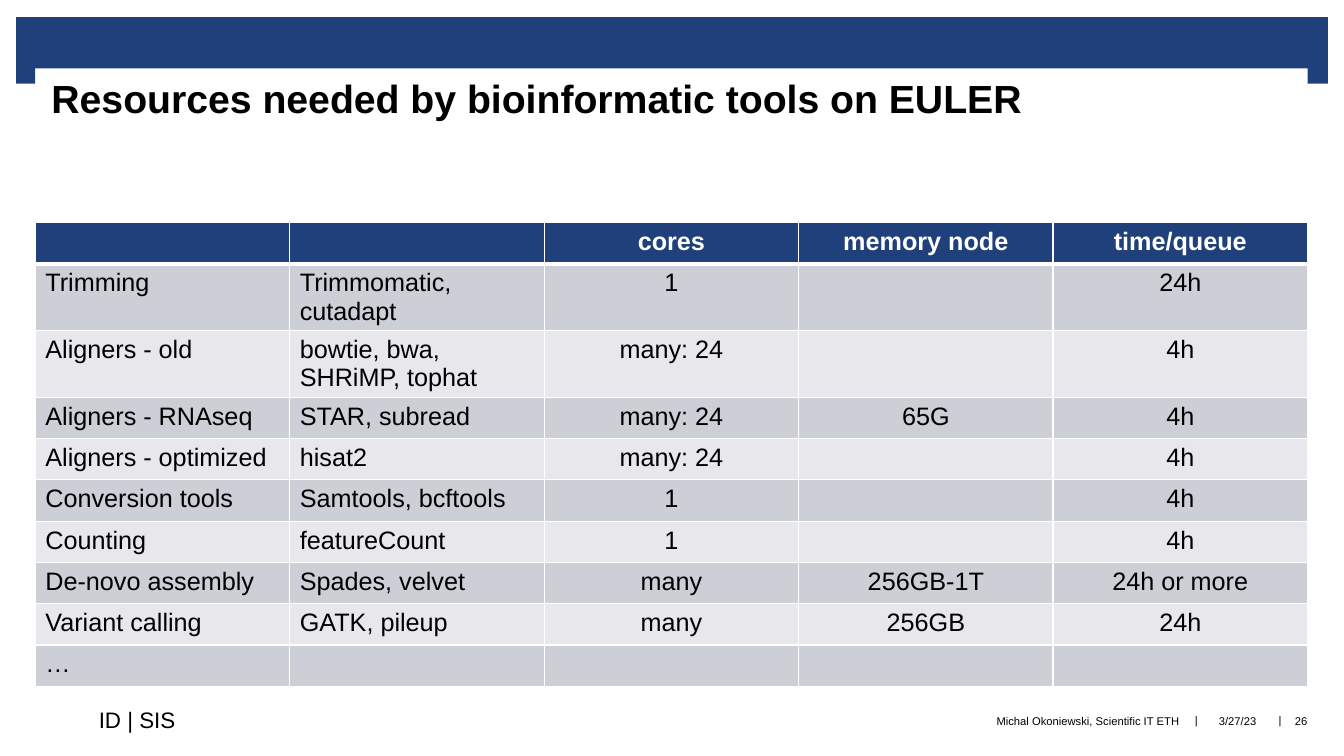
from typing import NamedTuple

from lxml import etree
from pptx import Presentation, util as u
from pptx.dml.color import RGBColor
from pptx.enum import shapes, text
from pptx.oxml.ns import qn

BLUE, WHITE, BLACK = "1F407A", "FFFFFF", "000000"
BANDS = ("CDCFD7", "E8E8EC")
LEFT, CENTER, RIGHT = text.PP_ALIGN.LEFT, text.PP_ALIGN.CENTER, text.PP_ALIGN.RIGHT
TOP, MIDDLE = text.MSO_ANCHOR.TOP, text.MSO_ANCHOR.MIDDLE


class Box(NamedTuple):
    left: float
    top: float
    width: float
    height: float


class Label(NamedTuple):
    words: str
    box: Box
    size: float = 8
    align: text.PP_ALIGN = CENTER


BARS = (
    Box(0.16, 0.17, 13.01, 0.51),
    Box(0.16, 0.65, 0.19, 0.18),
    Box(12.97, 0.65, 0.2, 0.18),
)
LABELS = (
    Label("|", Box(12.62, 6.89, 0.15, 0.51)),
    Label("|", Box(11.79, 6.89, 0.15, 0.51)),
    Label("ID | SIS", Box(0.98, 6.82, 1.2, 0.64), 16, LEFT),
    Label("3/27/23", Box(11.94, 6.9, 0.67, 0.51)),
    Label("Michal Okoniewski, Scientific IT ETH", Box(6.66, 6.9, 5.04, 0.5), 8, RIGHT),
    Label("26", Box(12.71, 6.9, 0.39, 0.51)),
)
TITLE_BOX = Box(0.35, 0.68, 12.62, 1.06)
TABLE_BOX = Box(0.35, 2.21, 12.62, 4.1)
RESOURCES = (
    ("", "", "cores", "memory node", "time/queue"),
    ("Trimming", "Trimmomatic, cutadapt", "1", "", "24h"),
    ("Aligners - old", "bowtie, bwa, SHRiMP, tophat", "many: 24", "", "4h"),
    ("Aligners - RNAseq", "STAR, subread", "many: 24", "65G", "4h"),
    ("Aligners - optimized", "hisat2", "many: 24", "", "4h"),
    ("Conversion tools", "Samtools, bcftools", "1", "", "4h"),
    ("Counting", "featureCount", "1", "", "4h"),
    ("De-novo assembly", "Spades, velvet", "many", "256GB-1T", "24h or more"),
    ("Variant calling", "GATK, pileup", "many", "256GB", "24h"),
    ("…", "", "", "", ""),
)


def inches(box: Box) -> list[u.Length]:
    return [u.Inches(length) for length in box]


def paint(fill, color: str) -> None:
    fill.solid()
    fill.fore_color.rgb = RGBColor.from_string(color)


def write(tf, words: str, *, size: float, color: str = BLACK, bold: bool = False,
          align: text.PP_ALIGN = LEFT) -> None:
    p = tf.paragraphs[0]
    p.alignment = align
    p.font.size = u.Pt(size)
    if words:
        r = p.add_run()
        r.text = words
        r.font.name = "Arial"
        r.font.size = u.Pt(size)
        r.font.bold = bold
        r.font.color.rgb = RGBColor.from_string(color)


def set_frame(tf, anchor: text.MSO_ANCHOR, side: float = 0, top: float = 0) -> None:
    tf.word_wrap = True
    tf.auto_size = text.MSO_AUTO_SIZE.NONE
    tf.vertical_anchor = anchor
    tf.margin_left = tf.margin_right = u.Inches(side)
    tf.margin_top = u.Inches(top)
    tf.margin_bottom = 0


def add_bar(s, box: Box) -> None:
    sp = s.shapes.add_shape(shapes.MSO_SHAPE.RECTANGLE, *inches(box))
    sp.shadow.inherit = False
    paint(sp.fill, BLUE)
    sp.line.fill.background()


def add_label(s, label: Label) -> None:
    tf = s.shapes.add_textbox(*inches(label.box)).text_frame
    set_frame(tf, MIDDLE)
    write(tf, label.words, size=label.size, align=label.align)


def set_title(s, words: str) -> None:
    sp = s.shapes.title
    sp.left, sp.top, sp.width, sp.height = inches(TITLE_BOX)
    paint(sp.fill, WHITE)
    set_frame(sp.text_frame, TOP, side=0.16, top=0.06)
    write(sp.text_frame, words, size=28, bold=True)


def set_borders(cell, top: float, bottom: float) -> None:
    props = cell._tc.get_or_add_tcPr()
    for tag, width in (("a:lnL", 1), ("a:lnR", 1), ("a:lnT", top), ("a:lnB", bottom)):
        line = etree.SubElement(props, qn(tag), w=str(u.Pt(width)))
        fill = etree.SubElement(line, qn("a:solidFill"))
        etree.SubElement(fill, qn("a:srgbClr"), val=WHITE)


def add_resources(s) -> None:
    rows, cols = len(RESOURCES), len(RESOURCES[0])
    table = s.shapes.add_table(rows, cols, *inches(TABLE_BOX)).table
    for i, row in enumerate(RESOURCES):
        header = i == 0
        for j, words in enumerate(row):
            cell = table.cell(i, j)
            set_borders(cell, top=3 if i == 1 else 1, bottom=3 if header else 1)
            paint(cell.fill, BLUE if header else BANDS[(i - 1) % 2])
            write(cell.text_frame, words, size=18, bold=header,
                  color=WHITE if header else BLACK, align=LEFT if j < 2 else CENTER)


def main() -> None:
    prs = Presentation()
    prs.slide_width, prs.slide_height = u.Inches(13.33), u.Inches(7.5)
    s = prs.slides.add_slide(prs.slide_layouts[5])
    set_title(s, "Resources needed by bioinformatic tools on EULER")
    for bar in BARS:
        add_bar(s, bar)
    for label in LABELS:
        add_label(s, label)
    add_resources(s)
    prs.save("out.pptx")


if __name__ == "__main__":
    main()
